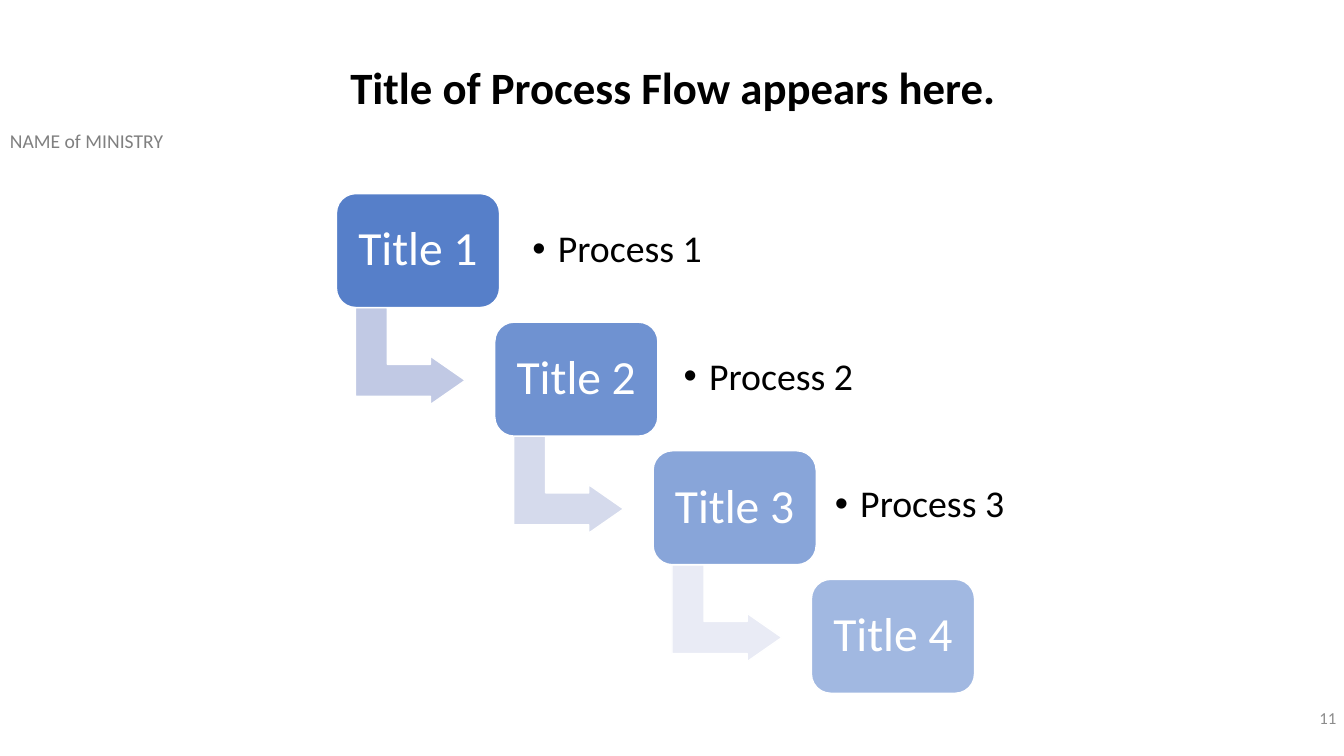
import pptx
import pptx.util
import pptx.dml.color
import pptx.enum.shapes
import pptx.enum.text
import pptx.oxml.ns
from lxml import etree

Cm, Pt = pptx.util.Cm, pptx.util.Pt
PRESET = pptx.enum.shapes.MSO_SHAPE
ALIGN = pptx.enum.text.PP_ALIGN
ANCHOR = pptx.enum.text.MSO_ANCHOR

TITLE = "Title of Process Flow appears here."
MINISTRY = "NAME of MINISTRY"
PAGE_NUMBER = "11"
# step title, opacity of its box in percent
STEPS = [("Title 1", 90), ("Title 2", 77), ("Title 3", 63), ("Title 4", 50)]
# process text, width of its box in cm
PROCESSES = [("Process 1", 5.41), ("Process 2", 7.98), ("Process 3", 6.65)]
ARROW_FILLS = ["C1C9E4", "D5DAEC", "E9EBF5"]

STEP_LEFT, STEP_TOP, STEP_WIDTH, STEP_HEIGHT = 8.48, 4.88, 4.11, 2.87
STEP_RIGHT, STEP_DOWN = 3.99, 3.24
ARROW_IN, ARROW_DOWN, ARROW_WIDTH, ARROW_HEIGHT = 0.64, 2.71, 2.44, 2.77
PROCESS_LEFT, PROCESS_TOP, PROCESS_HEIGHT = 13.06, 5.14, 2.34
PROCESS_RIGHT, PROCESS_DOWN = 3.81, 3.21
INSET, BULLET_INDENT = 0.36, 0.64


def color(value):
    return pptx.dml.color.RGBColor.from_string(value)


def set_all(target, values):
    for name, value in values.items():
        setattr(target, name, value)


def add_bullet(para):
    properties = para._p.get_or_add_pPr()
    properties.set("marL", str(Cm(BULLET_INDENT)))
    properties.set("indent", str(-Cm(BULLET_INDENT)))
    etree.SubElement(properties, pptx.oxml.ns.qn("a:buFont")).set("typeface", "Arial")
    etree.SubElement(properties, pptx.oxml.ns.qn("a:buChar")).set("char", "•")


def write(box, text, size, ink, align=ALIGN.LEFT, anchor=ANCHOR.MIDDLE,
          inset=None, spacing=None, bold=False, bullet=False):
    frame = box.text_frame
    set_all(frame, {"word_wrap": True, "vertical_anchor": anchor})
    if inset is not None:
        sides = ("left", "top", "right", "bottom")
        set_all(frame, {f"margin_{side}": Cm(inset) for side in sides})
    para = frame.paragraphs[0]
    set_all(para, {"alignment": align, "line_spacing": spacing})
    if bullet:
        add_bullet(para)
    span = para.add_run()
    span.text = text
    set_all(span.font, {"name": "Calibri", "size": Pt(size), "bold": bold})
    span.font.color.rgb = color(ink)


def add_preset(page, preset, place, fill, adjustments, opacity=100):
    shape = page.shapes.add_shape(preset, *map(Cm, place))
    shape.shadow.inherit = False
    shape.fill.solid()
    shape.fill.fore_color.rgb = color(fill)
    shape.line.color.rgb = color("FFFFFF")
    shape.line.width = Pt(1)
    for index, value in enumerate(adjustments):
        shape.adjustments[index] = value
    if opacity < 100:
        solid = shape._element.spPr.find(pptx.oxml.ns.qn("a:solidFill"))
        alpha = etree.SubElement(solid[0], pptx.oxml.ns.qn("a:alpha"))
        alpha.set("val", str(opacity * 1000))
    return shape


def add_text(page, place, *args, **formats):
    write(page.shapes.add_textbox(*map(Cm, place)), *args, **formats)


def add_flow(page):
    for index, fill in enumerate(ARROW_FILLS):
        place = (STEP_LEFT + ARROW_IN + index * STEP_RIGHT,
                 STEP_TOP + ARROW_DOWN + index * STEP_DOWN,
                 ARROW_WIDTH, ARROW_HEIGHT)
        arrow = add_preset(page, PRESET.BENT_UP_ARROW, place, fill, (0.33, 0.25, 0.36))
        arrow.rotation = 90
    for index, (text, opacity) in enumerate(STEPS):
        place = (STEP_LEFT + index * STEP_RIGHT, STEP_TOP + index * STEP_DOWN,
                 STEP_WIDTH, STEP_HEIGHT)
        step = add_preset(page, PRESET.ROUNDED_RECTANGLE, place, "4472C4", (0.17,), opacity)
        write(step, text, 34, "FFFFFF", ALIGN.CENTER, inset=INSET, spacing=0.9)
    for index, (text, width) in enumerate(PROCESSES):
        place = (PROCESS_LEFT + index * PROCESS_RIGHT,
                 PROCESS_TOP + index * PROCESS_DOWN, width, PROCESS_HEIGHT)
        add_text(page, place, text, 27, "000000", inset=INSET, spacing=0.9, bullet=True)


def main():
    deck = pptx.Presentation()
    set_all(deck, {"slide_width": Cm(33.87), "slide_height": Cm(19.05)})
    page = deck.slides.add_slide(deck.slide_layouts[5])
    title = page.shapes.title
    set_all(title, {"left": Cm(8.33), "top": Cm(1.52), "width": Cm(17.27), "height": Cm(2.72)})
    write(title, TITLE, 32, "000000", ALIGN.CENTER, ANCHOR.TOP, spacing=0.9, bold=True)
    add_text(page, (0, 3.12, 7.37, 0.86), MINISTRY, 14, "808080", anchor=ANCHOR.TOP)
    add_flow(page)
    add_text(page, (26.31, 17.58, 7.62, 1.02), PAGE_NUMBER, 12, "8C8C8C", ALIGN.RIGHT)
    deck.save("out.pptx")


if __name__ == "__main__":
    main()
